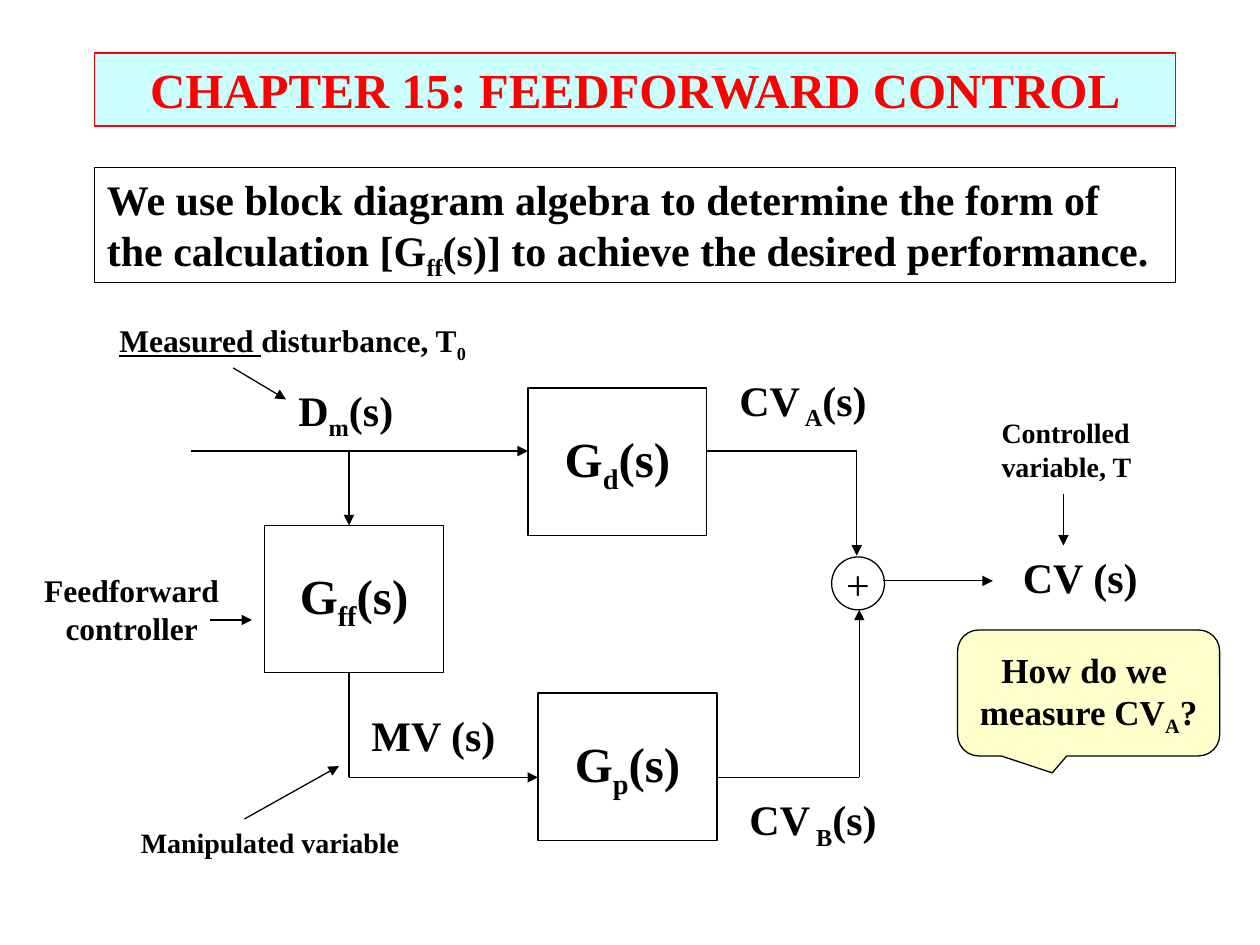
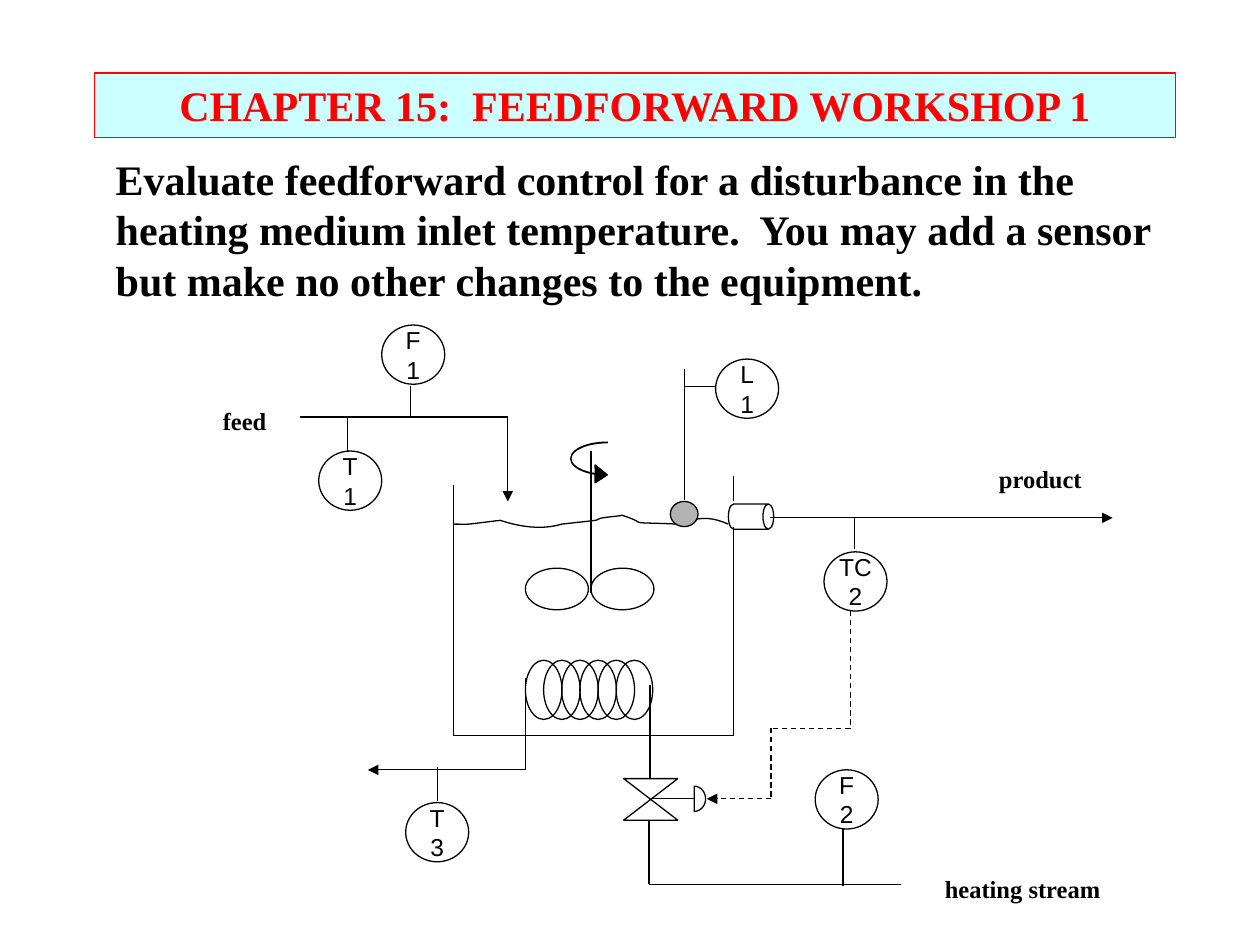
from dataclasses import dataclass
from itertools import pairwise
from math import cos, pi, sin

from pptx import Presentation
from pptx.dml.color import RGBColor
from pptx.enum.dml import MSO_LINE
from pptx.enum.shapes import MSO_CONNECTOR, MSO_SHAPE
from pptx.enum.text import MSO_ANCHOR as Anchor, PP_ALIGN as Align
from pptx.oxml.ns import qn
from pptx.slide import Slide
from pptx.util import Inches, Pt
from lxml.etree import SubElement

COLORS = {
    "ink": "000000",
    "title": "FF0000",
    "band": "CCFFFF",
    "callout": "FFFFCC",
    "float": "B2B2B2",
}
SERIF = "Times New Roman"
SANS = "Arial"
LINE_WIDTH = Pt(0.75)
BUBBLE = (0.5, 0.47)
BLOCK = (1.42, 1.17)


@dataclass
class Box:
    """A region of a page, in inches, whose parts are placed from its corner."""

    page: Slide
    left: float
    top: float
    width: float
    height: float

    def at(self, x, y):
        """Return the slide position of a point in the region."""
        return Inches(self.left + x), Inches(self.top + y)


def color(name):
    """Return the named palette colour."""
    return RGBColor.from_string(COLORS[name])


def write(shape, text, size, bold=True, font=SERIF, ink="ink",
          align=Align.LEFT, anchor=Anchor.TOP, wrap=False):
    """Write text into a shape, with subscripts between tildes."""
    frame = shape.text_frame
    frame.text = text
    frame.word_wrap = wrap
    frame.vertical_anchor = anchor
    for para in frame.paragraphs:
        para.alignment = align
        pieces = para.text.split("~")
        para.text = pieces[0]
        for piece in pieces[1:]:
            para.add_run().text = piece
        for index, span in enumerate(para.runs):
            span.font.size = Pt(size)
            span.font.bold = bold
            span.font.name = font
            span.font.color.rgb = color(ink)
            if index % 2:
                span.font._element.set("baseline", "-25000")


def outline(shape, fill=None, line="ink"):
    """Give a shape its fill and thin outline, without a shadow."""
    shape.shadow.inherit = False
    if fill:
        shape.fill.solid()
        shape.fill.fore_color.rgb = color(fill)
    else:
        shape.fill.background()
    shape.line.color.rgb = color(line)
    shape.line.width = LINE_WIDTH
    return shape


def draw(box, kind, x, y, width, height, fill=None, line="ink"):
    """Draw a preset shape in a region."""
    shape = box.page.shapes.add_shape(kind, *box.at(x, y), Inches(width), Inches(height))
    return outline(shape, fill, line)


def trace(box, points, close=False):
    """Draw a freeform outline through points of a region."""
    start, *others = [box.at(*point) for point in points]
    builder = box.page.shapes.build_freeform(*start)
    builder.add_line_segments(others, close=close)
    return outline(builder.convert_to_shape())


def route(box, *points, arrow=False, dashed=False):
    """Join points with straight connectors, with an arrow at the last one."""
    for start, end in pairwise(points):
        connector = box.page.shapes.add_connector(
            MSO_CONNECTOR.STRAIGHT, *box.at(*start), *box.at(*end))
        connector.line.color.rgb = color("ink")
        connector.line.width = LINE_WIDTH
        if dashed:
            connector.line.dash_style = MSO_LINE.DASH
        properties = connector._element.spPr
        if arrow and end == points[-1]:
            SubElement(properties.find(qn("a:ln")), qn("a:tailEnd"), type="triangle")
        SubElement(properties, qn("a:effectLst"))


def label(box, text, x, y, width, height, size, **style):
    """Place a text box in a region."""
    shape = box.page.shapes.add_textbox(*box.at(x, y), Inches(width), Inches(height))
    write(shape, text, size, **style)
    return shape


def bubble(box, text, x, y):
    """Draw an instrument bubble with its letters and number."""
    shape = draw(box, MSO_SHAPE.OVAL, x, y, *BUBBLE)
    write(shape, text, 14, bold=False, font=SANS, align=Align.CENTER, anchor=Anchor.MIDDLE)


def title_band(box, text, size):
    """Draw the chapter title band."""
    band = draw(box, MSO_SHAPE.RECTANGLE, 0, 0, box.width, box.height, "band", "title")
    write(band, text, size, ink="title", align=Align.CENTER, wrap=True)


def statement(box, text, framed=False):
    """Write the main statement of a slide, framed or plain."""
    if framed:
        frame = draw(box, MSO_SHAPE.RECTANGLE, 0, 0, box.width, box.height)
        write(frame, text, 24, wrap=True)
    else:
        label(box, text, 0, 0, box.width, box.height, 24, wrap=True)


def block_diagram(box):
    """Draw the transfer function blocks, their signals and the sum."""
    for subscript, x, y in (("d", 3.94, 0.58), ("p", 4.02, 3), ("ff", 1.85, 1.67)):
        block = draw(box, MSO_SHAPE.RECTANGLE, x, y, *BLOCK)
        write(block, f"G~{subscript}~(s)", 28, align=Align.CENTER, anchor=Anchor.MIDDLE)
    total = draw(box, MSO_SHAPE.OVAL, 6.35, 1.92, 0.42, 0.42)
    write(total, "+", 24, bold=False, align=Align.CENTER, anchor=Anchor.MIDDLE)

    signals = (
        ((1.27, 1.08), (3.94, 1.08)),
        ((2.52, 1.08), (2.52, 1.67)),
        ((2.52, 2.83), (2.52, 3.67), (4.02, 3.67)),
        ((5.44, 3.67), (6.57, 3.67), (6.57, 2.34)),
        ((5.36, 1.08), (6.55, 1.08), (6.55, 1.91)),
        ((6.76, 2.11), (7.63, 2.11)),
    )
    for points in signals:
        route(box, *points, arrow=True)

    names = (
        ("D~m~(s)", 2.02, 0.5),
        ("CV~ A~(s)", 5.52, 0.42),
        ("CV~ B~(s)", 5.6, 3.75),
        ("CV (s)", 7.77, 1.83),
        ("MV (s)", 2.6, 3.08),
    )
    for text, x, y in names:
        label(box, text, x, y, 1.33, 0.5, 24)


def diagram_notes(box):
    """Explain the signals of the block diagram with pointed notes."""
    measured = label(box, "Measured disturbance, T~0", 0.6, 0, 3.17, 0.4, 18)
    para = measured.text_frame.paragraphs[0]
    first = para.runs[0]
    rest = para.add_run()
    first._r.addnext(rest._r)
    first.text, rest.text = "Measured ", "disturbance, T"
    rest.font.size, rest.font.bold, rest.font.name = Pt(18), True, SERIF
    rest.font.color.rgb = color("ink")
    first.font.underline = True

    label(box, "Manipulated variable", 0.77, 4, 3, 0.37, 16)
    label(box, "Controlled\nvariable, T", 7.6, 0.75, 1.58, 0.64, 16)
    label(box, "Feedforward\ncontroller", 0, 1.98, 1.59, 0.7, 18,
          align=Align.CENTER, anchor=Anchor.MIDDLE)
    pointers = (
        ((1.6, 0.42), (2.02, 0.67)),
        ((1.69, 4), (2.44, 3.58)),
        ((8.19, 1.42), (8.19, 1.83)),
        ((1.42, 2.42), (1.75, 2.42)),
    )
    for start, end in pointers:
        route(box, start, end, arrow=True)


def question_callout(box):
    """Draw the question in a rounded callout."""
    callout = draw(box, MSO_SHAPE.ROUNDED_RECTANGULAR_CALLOUT, 0, 0,
                   box.width, box.height, "callout")
    for index, value in enumerate((-0.139, 0.634, 0.167)):
        callout.adjustments[index] = value
    write(callout, "How do we \nmeasure CV~A~?", 20, align=Align.CENTER, anchor=Anchor.MIDDLE)


def curve(points, steps=10):
    """Sample a chain of cubic curves into points."""
    sampled = [points[0]]
    for first in range(0, len(points) - 1, 3):
        corners = points[first:first + 4]
        for step in range(1, steps + 1):
            t = step / steps
            weights = ((1 - t) ** 3, 3 * t * (1 - t) ** 2, 3 * t * t * (1 - t), t ** 3)
            sampled.append(tuple(
                sum(w * corner[axis] for w, corner in zip(weights, corners))
                for axis in (0, 1)))
    return sampled


def stirred_tank(box):
    """Draw the tank with its outlet, stirrer and liquid surface."""
    route(box, (0, 0.34), (0, box.height), (box.width, box.height), (box.width, 0.67))
    route(box, (box.width, 0.47), (box.width, 0.27))
    outlet = draw(box, MSO_SHAPE.CAN, 2.26, 0.41, 0.2, 0.36)
    outlet.rotation = 90
    outlet.adjustments[0] = 0.426

    route(box, (1.09, 0.07), (1.09, 1.2))
    for x in (0.57, 1.09):
        draw(box, MSO_SHAPE.OVAL, x, 1, 0.5, 0.33)
    trace(box, curve((
        (2.18, 0.65), (2.02, 0.58), (1.94, 0.6), (1.78, 0.65),
        (1.32, 0.63), (1.58, 0.66), (1.34, 0.58),
        (1.29, 0.59), (1.24, 0.59), (1.19, 0.6),
        (1.17, 0.6), (1.15, 0.61), (1.13, 0.62),
        (1.04, 0.63), (0.86, 0.65), (0.86, 0.65),
        (0.7, 0.7), (0.52, 0.67), (0.37, 0.62),
        (0.04, 0.66), (0.16, 0.65), (0, 0.65))))
    turn = draw(box, MSO_SHAPE.CURVED_RIGHT_ARROW, 0.93, 0, 0.29, 0.33, "ink")
    for index, value in enumerate((0.014, 0.488, 0.333)):
        turn.adjustments[index] = value


def heating_coil(box):
    """Draw the coil with its two legs and the measured return stream."""
    for turn in range(6):
        draw(box, MSO_SHAPE.OVAL, 1.25 + turn * 0.144, 0, 0.29, 0.47)
    route(box, (2.24, 0.2), (2.24, 0.94))
    route(box, (1.25, 0.14), (1.25, 0.87), (0, 0.87), arrow=True)
    route(box, (0.55, 1.12), (0.55, 0.85))
    bubble(box, "T\n3", 0.3, 1.13)


def feed_stream(box):
    """Draw the feed pipe with its temperature and flow sensors."""
    label(box, "feed", 0, 0.59, 0.55, 0.33, 14)
    route(box, (0.71, 0.73), (2.36, 0.73), (2.36, 1.4), arrow=True)
    route(box, (1.09, 1.01), (1.09, 0.72))
    route(box, (1.59, 0.48), (1.59, 0.74))
    bubble(box, "T\n1", 0.86, 1)
    bubble(box, "F\n1", 1.36, 0)


def level_sensor(box):
    """Draw the float, its rod and the level bubble."""
    draw(box, MSO_SHAPE.OVAL, 0, 1.13, 0.22, 0.2, "float")
    route(box, (0.11, 1.12), (0.11, 0.08))
    route(box, (0.36, 0.22), (0.11, 0.22))
    bubble(box, "L\n1", 0.36, 0)


def product_stream(box):
    """Draw the product pipe and the temperature controller signal."""
    route(box, (0, 0.48), (2.72, 0.48), arrow=True)
    label(box, "product", 1.72, 0, 0.86, 0.33, 14)
    route(box, (0.67, 0.73), (0.67, 0.47))
    bubble(box, "TC\n2", 0.43, 0.75)
    route(box, (0.64, 1.22), (0.64, 2.15), (0.01, 2.15), (0.01, 2.71), (-0.5, 2.71),
          arrow=True, dashed=True)


def heating_stream(box):
    """Draw the control valve and the heating pipe with its flow sensor."""
    trace(box, ((0, 0.07), (0.43, 0.07), (0, 0.4), (0.43, 0.4)), close=True)
    route(box, (0.22, 0.23), (0.56, 0.23))
    angles = [pi * (step / 16 - 0.5) for step in range(17)]
    trace(box, [(0.56 + 0.09 * cos(a), 0.23 + 0.1 * sin(a)) for a in angles], close=True)
    route(box, (0.2, 0.4), (0.2, 0.91), (2.2, 0.91))
    route(box, (1.74, 0.47), (1.74, 0.92))
    bubble(box, "F\n2", 1.52, 0)
    label(box, "heating stream", 2.45, 0.78, 1.44, 0.33, 14)


def main():
    """Build both slides and save the deck."""
    deck = Presentation()
    deck.slide_width, deck.slide_height = Inches(10), Inches(7.5)
    algebra, workshop = [deck.slides.add_slide(deck.slide_layouts[6]) for _ in range(2)]

    title_band(Box(algebra, 0.75, 0.42, 8.58, 0.58), "CHAPTER 15: FEEDFORWARD CONTROL", 28)
    statement(Box(algebra, 0.75, 1.33, 8.58, 0.91),
              "We use block diagram algebra to determine the form of the calculation "
              "[G~ff~(s)] to achieve the desired performance.", framed=True)
    diagram = Box(algebra, 0.25, 2.5, 9.1, 4.4)
    block_diagram(diagram)
    diagram_notes(diagram)
    question_callout(Box(algebra, 7.6, 5, 2.08, 1))

    title_band(Box(workshop, 0.75, 0.58, 8.58, 0.51),
               "CHAPTER 15:  FEEDFORWARD WORKSHOP 1", 24)
    statement(Box(workshop, 0.82, 1.17, 8.5, 1.3),
              "Evaluate feedforward control for a disturbance in the heating medium inlet "
              "temperature.  You may add a sensor but make no other changes to the equipment.")
    heating_coil(Box(workshop, 2.92, 5.24, 2.26, 1.6))
    stirred_tank(Box(workshop, 3.6, 3.51, 2.22, 2.33))
    feed_stream(Box(workshop, 1.67, 2.58, 2.36, 1.47))
    level_sensor(Box(workshop, 5.32, 2.85, 0.86, 1.33))
    product_stream(Box(workshop, 6.11, 3.63, 2.72, 2.71))
    heating_stream(Box(workshop, 4.95, 6.11, 3.89, 1.11))
    deck.save("out.pptx")


if __name__ == "__main__":
    main()
